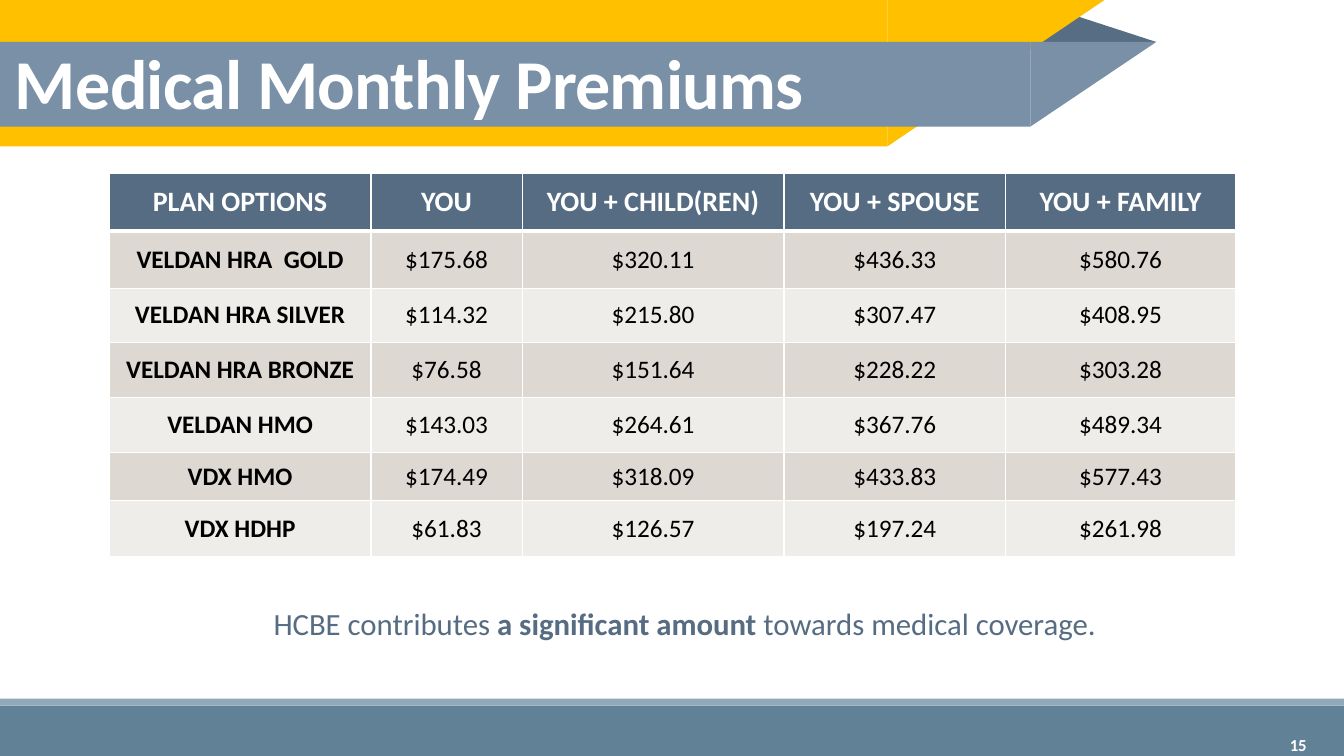
import pptx
import pptx.dml.color
import pptx.enum.shapes
import pptx.enum.text
import pptx.oxml
import pptx.oxml.ns
import pptx.util

Pt = pptx.util.Pt
SHAPE = pptx.enum.shapes.MSO_SHAPE
ALIGN = pptx.enum.text.PP_ALIGN
ANCHOR = pptx.enum.text.MSO_ANCHOR

WHITE, BLACK, SLATE, YELLOW, STEEL = "FFFFFF", "000000", "566C83", "FFC000", "7990A7"
ROW_FILLS = ("DED8D3", "EFEDEA")
WIDTH, HEIGHT = 960, 540

TITLE = "Medical Monthly Premiums"
NOTE = [("HCBE contributes ", False), ("a significant amount ", True),
        ("towards medical coverage. ", False)]
PAGE = "15"
PREMIUMS = [
    ("PLAN OPTIONS", "YOU", "YOU + CHILD(REN)", "YOU + SPOUSE", "YOU + FAMILY"),
    ("VELDAN HRA  GOLD", "$175.68", "$320.11", "$436.33", "$580.76"),
    ("VELDAN HRA SILVER", "$114.32", "$215.80", "$307.47", "$408.95"),
    ("VELDAN HRA BRONZE", "$76.58", "$151.64", "$228.22", "$303.28"),
    ("VELDAN HMO", "$143.03", "$264.61", "$367.76", "$489.34"),
    ("VDX HMO", "$174.49", "$318.09", "$433.83", "$577.43"),
    ("VDX HDHP", "$61.83", "$126.57", "$197.24", "$261.98"),
]
COL_WIDTHS = (187, 108, 187, 158.5, 164)
ROW_HEIGHTS = (41.5, 41, 38.5, 39.5, 39.5, 34, 40)

# top, height, straight width, slanted width, colour
BANDS = [(0, 104.5, 634, 155, YELLOW), (30, 60.5, 736, 90, STEEL)]
FOOTER = [(504, 36, "618197"), (499, 5, "92A9B9")]


def rgb(code):
    return pptx.dml.color.RGBColor.from_string(code)


def add_shape(slide, kind, left, top, width, height, color):
    sp = slide.shapes.add_shape(kind, Pt(left), Pt(top), Pt(width), Pt(height))
    sp.shadow.inherit = False
    sp.fill.solid()
    sp.fill.fore_color.rgb = rgb(color)
    sp.line.fill.background()
    return sp


def write(tf, runs, size, color, align=ALIGN.LEFT, spacing=None, tracking=None):
    """Fill the first paragraph with (text, bold) runs."""
    p = tf.paragraphs[0]
    p.alignment = align
    p.line_spacing = spacing
    for text, bold in runs:
        r = p.add_run()
        r.text = text
        r.font.name = "Calibri"
        r.font.size = Pt(size)
        r.font.bold = bold
        r.font.color.rgb = rgb(color)
        if tracking is not None:
            r._r.get_or_add_rPr().set("spc", str(int(tracking * 100)))


def add_text(slide, box, runs, anchor=ANCHOR.TOP, **fmt):
    tf = slide.shapes.add_textbox(*map(Pt, box)).text_frame
    tf.word_wrap = True
    tf.vertical_anchor = anchor
    write(tf, runs, **fmt)
    return tf


def set_borders(cell, **widths):
    tc_pr = cell._tc.get_or_add_tcPr()
    for side in "LRTB":
        tc_pr.append(pptx.oxml.parse_xml(
            f'<a:ln{side} {pptx.oxml.ns.nsdecls("a")} w="{Pt(widths.get(side, 1))}">'
            f'<a:solidFill><a:srgbClr val="{WHITE}"/></a:solidFill></a:ln{side}>'))


def add_backdrop(slide):
    for top, height, color in FOOTER:
        add_shape(slide, SHAPE.RECTANGLE, 0, top, WIDTH, height, color)
    fold = add_shape(slide, SHAPE.ISOSCELES_TRIANGLE, 735, 10, 91, 20, "566D83")
    fold.adjustments[0] = 0.324
    for top, height, straight, slant, color in BANDS:
        add_shape(slide, SHAPE.RECTANGLE, 0, top, straight, height, color)
        tip = add_shape(slide, SHAPE.RIGHT_TRIANGLE, straight, top, slant, height, color)
        tip._element.spPr.xfrm.set("flipV", "1")


def add_title(slide):
    title = slide.shapes.title
    title.left, title.top, title.width, title.height = map(Pt, (3.5, 34, 879, 77))
    tf = title.text_frame
    tf.word_wrap = True
    tf.auto_size = pptx.enum.text.MSO_AUTO_SIZE.NONE
    tf.vertical_anchor = ANCHOR.TOP
    write(tf, [(TITLE, True)], size=50, color=WHITE, spacing=0.85, tracking=-0.5)
    slide.shapes._spTree.append(title._element)


def add_premiums(slide):
    table = slide.shapes.add_table(
        len(PREMIUMS), len(COL_WIDTHS), Pt(78), Pt(123.5),
        Pt(sum(COL_WIDTHS)), Pt(sum(ROW_HEIGHTS))).table
    for col, width in zip(table.columns, COL_WIDTHS):
        col.width = Pt(width)
    for row, height in zip(table.rows, ROW_HEIGHTS):
        row.height = Pt(height)
    for i, values in enumerate(PREMIUMS):
        header = i == 0
        for j, text in enumerate(values):
            cell = table.cell(i, j)
            set_borders(cell, T=3 if i == 1 else 1, B=3 if header else 1)
            cell.fill.solid()
            cell.fill.fore_color.rgb = rgb(SLATE if header else ROW_FILLS[(i - 1) % 2])
            cell.vertical_anchor = ANCHOR.MIDDLE
            if not header and j:
                cell.margin_left = cell.margin_right = Pt(4.5)
                cell.margin_top = cell.margin_bottom = Pt(2.25)
            write(cell.text_frame, [(text, header or j == 0)], size=20 if header else 18,
                  color=WHITE if header else BLACK, align=ALIGN.CENTER)


def main():
    prs = pptx.Presentation()
    prs.slide_width, prs.slide_height = Pt(WIDTH), Pt(HEIGHT)
    slide = prs.slides.add_slide(prs.slide_layouts.get_by_name("Title Only"))
    add_backdrop(slide)
    add_title(slide)
    add_text(slide, (837.5, 517.5, 103, 29), [(PAGE, True)], ANCHOR.MIDDLE,
             size=12, color=WHITE, align=ALIGN.RIGHT)
    note = add_text(slide, (145.5, 428.5, 692, 34), NOTE,
                    size=22, color=SLATE, align=ALIGN.CENTER)
    note.auto_size = pptx.enum.text.MSO_AUTO_SIZE.SHAPE_TO_FIT_TEXT
    add_premiums(slide)
    prs.save("out.pptx")


if __name__ == "__main__":
    main()
